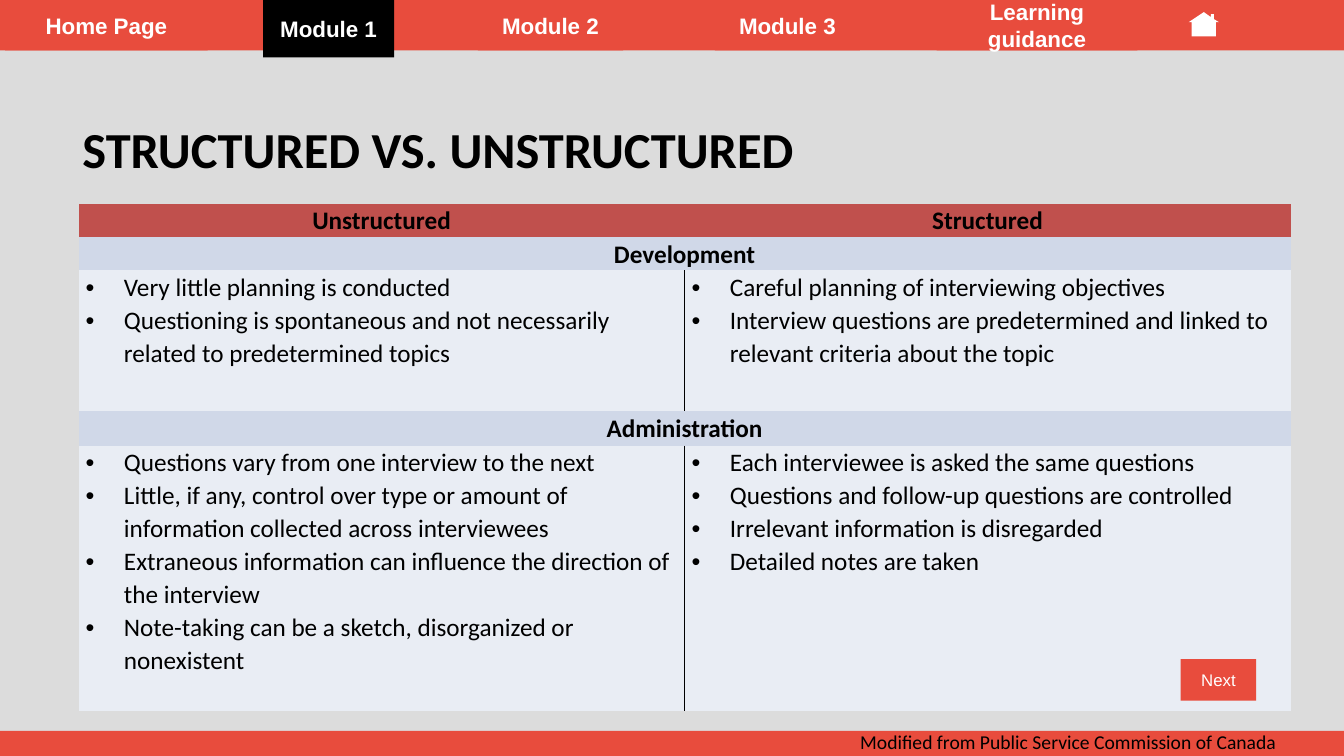
"""Build the slide comparing structured and unstructured interviews."""
from lxml.etree import SubElement
from pptx import Presentation
from pptx.dml.color import RGBColor
from pptx.enum.shapes import MSO_SHAPE
from pptx.enum.text import MSO_ANCHOR, PP_ALIGN
from pptx.oxml import parse_xml
from pptx.oxml.ns import nsdecls, qn
from pptx.util import Pt

PX = 9144
RED = RGBColor(0xE8, 0x4C, 0x3D)
BLACK = RGBColor(0, 0, 0)
WHITE = RGBColor(255, 255, 255)
GREY = RGBColor(0xDC, 0xDC, 0xDC)
HEADER = RGBColor(0xC0, 0x50, 0x4D)
SECTION = RGBColor(0xD0, 0xD8, 0xE8)
BODY = RGBColor(0xE9, 0xED, 0xF4)
NO_GRID_STYLE = "{2D5ABB26-0587-4C30-8999-92F81FD0307C}"

NAVIGATION = [
    ("Home Page", 5, 201, 50, RED),
    ("Module 2", 474, 144, 50, RED),
    ("Module 3", 709, 144, 50, RED),
    ("Learning guidance", 929, 199, 50, RED),
    ("Module 1", 261, 130, 57, BLACK),
]
HOUSE = [(1209, 22), (1204, 19), (1204, 14), (1201, 14), (1201, 17), (1194, 12),
         (1179, 22), (1182, 22), (1182, 36), (1206, 36), (1206, 22)]
COLUMN_WIDTH = 601
ROW_HEIGHTS = [33, 33, 140, 34, 263]
HEADINGS = ["Unstructured", "Structured"]
SECTIONS = [
    ("Development", [
        ["Very little planning is conducted",
         "Questioning is spontaneous and not necessarily related to predetermined topics"],
        ["Careful planning of interviewing objectives",
         "Interview questions are predetermined and linked to relevant criteria about the topic"],
    ]),
    ("Administration", [
        ["Questions vary from one interview to the next",
         "Little, if any, control over type or amount of information collected across interviewees",
         "Extraneous information can influence the direction of the interview",
         "Note-taking can be a sketch, disorganized or nonexistent"],
        ["Each interviewee is asked the same questions",
         "Questions and follow-up questions are controlled",
         "Irrelevant information is disregarded",
         "Detailed notes are taken"],
    ]),
]


def scaled(*lengths):
    return [length * PX for length in lengths]


def add_span(para, text, size, font="Calibri", color=BLACK, bold=False):
    span = para.add_run()
    span.text = text
    span.font.name = font
    span.font.size = Pt(size)
    span.font.bold = bold
    span.font.color.rgb = color


def paint(shape, color):
    shape.shadow.inherit = False
    shape.fill.solid()
    shape.fill.fore_color.rgb = color
    shape.line.fill.background()


def add_block(page, bounds, color, text="", size=16, bold=True):
    block = page.shapes.add_shape(MSO_SHAPE.RECTANGLE, *scaled(*bounds))
    paint(block, color)
    if text:
        block.text_frame.vertical_anchor = MSO_ANCHOR.MIDDLE
        para = block.text_frame.paragraphs[0]
        para.alignment = PP_ALIGN.CENTER
        add_span(para, text, size, "Arial", WHITE, bold)


def add_house(page):
    builder = page.shapes.build_freeform(*HOUSE[0], scale=PX)
    builder.add_line_segments(HOUSE[1:], close=True)
    paint(builder.convert_to_shape(), WHITE)


def add_text(page, bounds, text, size, bold=False, align=PP_ALIGN.LEFT,
             anchor=MSO_ANCHOR.TOP, spacing=1.0):
    box = page.shapes.add_textbox(*scaled(*bounds))
    box.text_frame.word_wrap = True
    box.text_frame.vertical_anchor = anchor
    para = box.text_frame.paragraphs[0]
    para.alignment = align
    para.line_spacing = spacing
    add_span(para, text, size, bold=bold)


def add_bullet(para):
    properties = para._p.get_or_add_pPr()
    properties.set("marL", str(38 * PX))
    properties.set("indent", str(-38 * PX))
    SubElement(properties, qn("a:buFont"), typeface="Arial")
    SubElement(properties, qn("a:buChar"), char="•")


def fill_cell(cell, lines, color, bulleted=False):
    cell.fill.solid()
    cell.fill.fore_color.rgb = color
    cell.margin_left = cell.margin_right = 7 * PX
    cell.margin_top = cell.margin_bottom = 0
    frame = cell.text_frame
    for index, line in enumerate(lines):
        para = frame.add_paragraph() if index else frame.paragraphs[0]
        if bulleted:
            add_bullet(para)
        else:
            para.alignment = PP_ALIGN.CENTER
        para.line_spacing = 1.07
        add_span(para, line, 18, bold=not bulleted)


def add_border(cell, side):
    border = parse_xml(
        f'<a:{side} {nsdecls("a")} w="{Pt(1)}"><a:solidFill>'
        f'<a:srgbClr val="{BLACK}"/></a:solidFill></a:{side}>')
    cell._tc.get_or_add_tcPr().insert(0, border)


def add_comparison(page):
    bounds = scaled(78, 202, 2 * COLUMN_WIDTH, sum(ROW_HEIGHTS))
    table = page.shapes.add_table(len(ROW_HEIGHTS), 2, *bounds).table
    table.horz_banding = False
    table._tbl.tblPr.find(qn("a:tableStyleId")).text = NO_GRID_STYLE
    for column in table.columns:
        column.width = COLUMN_WIDTH * PX
    for row, height in zip(table.rows, ROW_HEIGHTS):
        row.height = height * PX
    for column, heading in enumerate(HEADINGS):
        fill_cell(table.cell(0, column), [heading], HEADER)
    for index, (section, columns) in enumerate(SECTIONS):
        top = 1 + 2 * index
        table.cell(top, 0).merge(table.cell(top, 1))
        fill_cell(table.cell(top, 0), [section], SECTION)
        for column, (lines, side) in enumerate(zip(columns, ("lnR", "lnL"))):
            cell = table.cell(top + 1, column)
            fill_cell(cell, lines, BODY, bulleted=True)
            add_border(cell, side)


def main():
    deck = Presentation()
    deck.slide_width, deck.slide_height = scaled(1333, 750)
    page = deck.slides.add_slide(deck.slide_layouts[6])
    page.background.fill.solid()
    page.background.fill.fore_color.rgb = GREY
    add_block(page, (0, 0, 1333, 50), RED)
    for label, left, width, height, color in NAVIGATION:
        add_block(page, (left, 0, width, height), color, label)
    add_house(page)
    add_block(page, (0, 725, 1333, 25), RED)
    add_comparison(page)
    add_text(page, (679, 719, 597, 34), "Modified from Public Service Commission of Canada",
             14, align=PP_ALIGN.RIGHT)
    add_text(page, (72, 69, 1070, 165), "STRUCTURED VS. UNSTRUCTURED", 36, bold=True,
             anchor=MSO_ANCHOR.MIDDLE, spacing=0.85)
    add_block(page, (1171, 654, 75, 41), RED, "Next", size=12, bold=False)
    deck.save("out.pptx")


if __name__ == "__main__":
    main()
